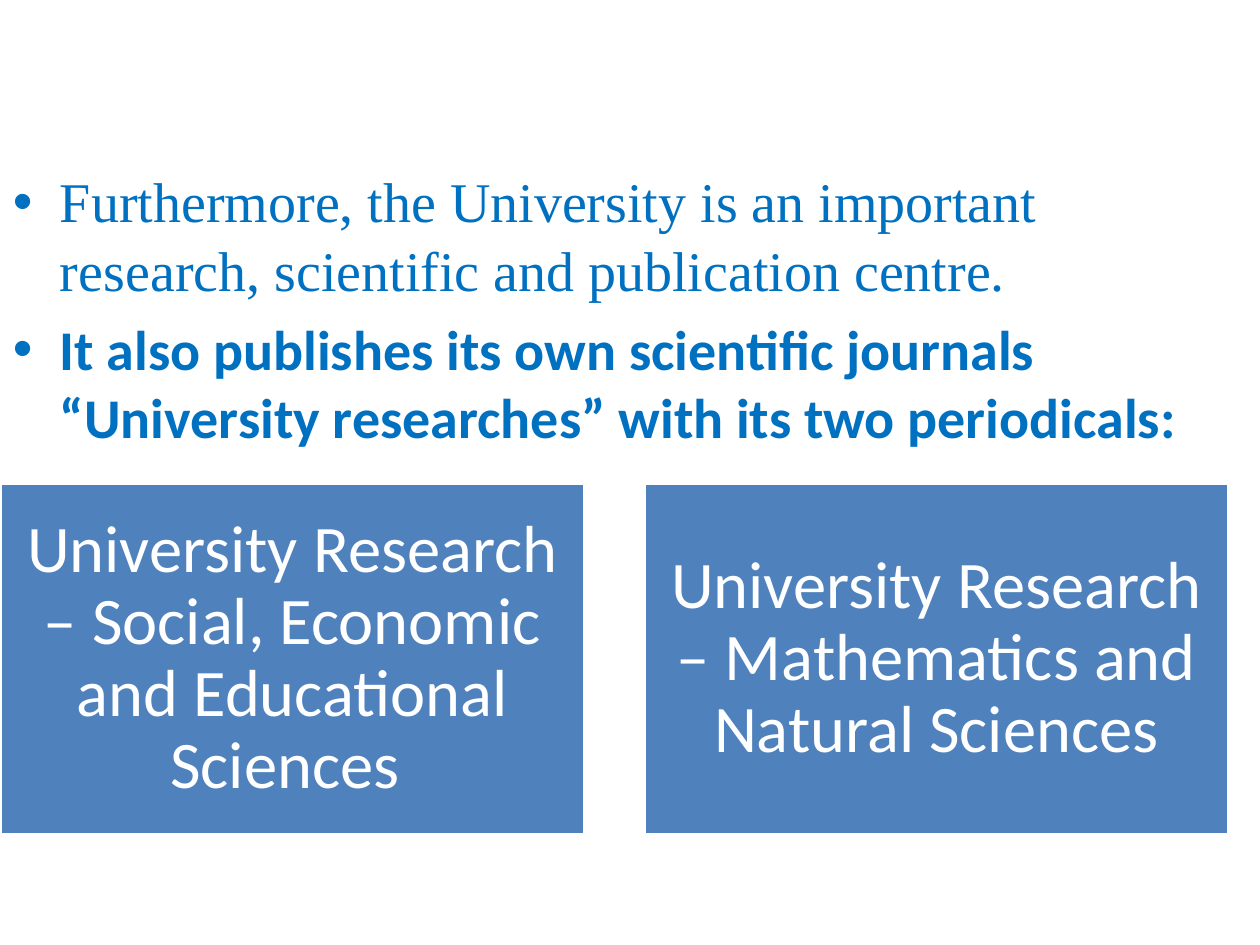
"""Builds a slide on the university's research journals."""
from pptx import Presentation
from pptx.dml.color import RGBColor
from pptx.enum.shapes import MSO_SHAPE
from pptx.enum.text import MSO_ANCHOR, PP_ALIGN
from pptx.oxml.ns import qn
from pptx.util import Pt
from lxml import etree

RECTANGLE = MSO_SHAPE.RECTANGLE
MIDDLE, TOP = MSO_ANCHOR.MIDDLE, MSO_ANCHOR.TOP
CENTER, LEFT = PP_ALIGN.CENTER, PP_ALIGN.LEFT
BLUE = RGBColor(0x00, 0x70, 0xC0)
PANEL = RGBColor(0x4F, 0x81, 0xBD)
WHITE = RGBColor(0xFF, 0xFF, 0xFF)

STATEMENTS = [
    ("Furthermore, the University is an important research, scientific "
     "and publication centre.", "Times New Roman", False),
    ("It also publishes its own scientific journals “University researches” "
     "with its two periodicals:", "Calibri", True),
]
PERIODICALS = [
    "University Research – Social, Economic and Educational Sciences ",
    "University Research – Mathematics and Natural Sciences",
]

SLIDE_W, SLIDE_H = 1260, 945
BODY_W, BODY_H = 1230, 844
BODY_INSETS = (13, 166, 13, 6)
BULLET_INDENT = 47
PANEL_TOP, PANEL_W, PANEL_H, PANEL_GAP = 483, 585, 352, 59
PANEL_INSETS = (20, 20, 20, 20)


def px(length):
    return round(length * 914400 / 126)


def set_frame(frame, insets, anchor):
    frame.word_wrap = True
    frame.vertical_anchor = anchor
    (frame.margin_left, frame.margin_top,
     frame.margin_right, frame.margin_bottom) = map(px, insets)


def add_run(paragraph, words, size, face, color, bold=False):
    run = paragraph.add_run()
    run.text = words
    run.font.size = Pt(size)
    run.font.name = face
    run.font.bold = bold
    run.font.color.rgb = color


def add_bullet(paragraph):
    properties = paragraph._p.get_or_add_pPr()
    properties.set("marL", str(px(BULLET_INDENT)))
    properties.set("indent", str(-px(BULLET_INDENT)))
    etree.SubElement(properties, qn("a:buFont")).set("typeface", "Arial")
    etree.SubElement(properties, qn("a:buChar")).set("char", "•")


def add_statements(slide):
    body = slide.shapes.add_textbox(0, 0, px(BODY_W), px(BODY_H)).text_frame
    set_frame(body, BODY_INSETS, TOP)
    for index, (words, face, bold) in enumerate(STATEMENTS):
        paragraph = body.add_paragraph() if index else body.paragraphs[0]
        paragraph.alignment = LEFT
        paragraph.line_spacing = Pt(39)
        paragraph.space_before = Pt(6.4 if index else 0)
        add_bullet(paragraph)
        add_run(paragraph, words, 32, face, BLUE, bold)


def add_periodicals(slide):
    for column, title in enumerate(PERIODICALS):
        panel = slide.shapes.add_shape(
            RECTANGLE, px(column * (PANEL_W + PANEL_GAP)), px(PANEL_TOP),
            px(PANEL_W), px(PANEL_H))
        panel.shadow.inherit = False
        panel.fill.solid()
        panel.fill.fore_color.rgb = PANEL
        panel.line.color.rgb = WHITE
        panel.line.width = Pt(2)
        set_frame(panel.text_frame, PANEL_INSETS, MIDDLE)
        paragraph = panel.text_frame.paragraphs[0]
        paragraph.alignment = CENTER
        paragraph.line_spacing = 0.9
        add_run(paragraph, title, 38, "Calibri", WHITE)


def main():
    deck = Presentation()
    deck.slide_width, deck.slide_height = px(SLIDE_W), px(SLIDE_H)
    slide = deck.slides.add_slide(deck.slide_layouts[6])
    add_statements(slide)
    add_periodicals(slide)
    deck.save("out.pptx")


if __name__ == "__main__":
    main()
